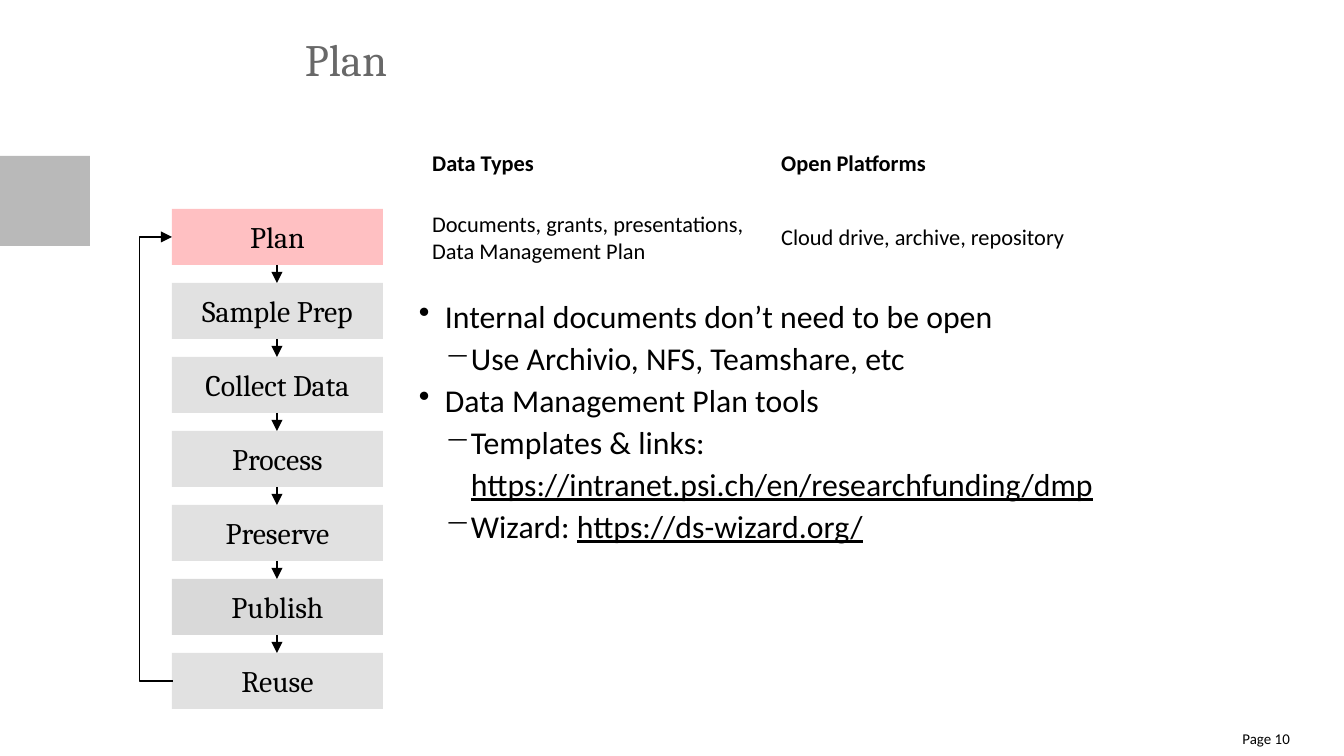
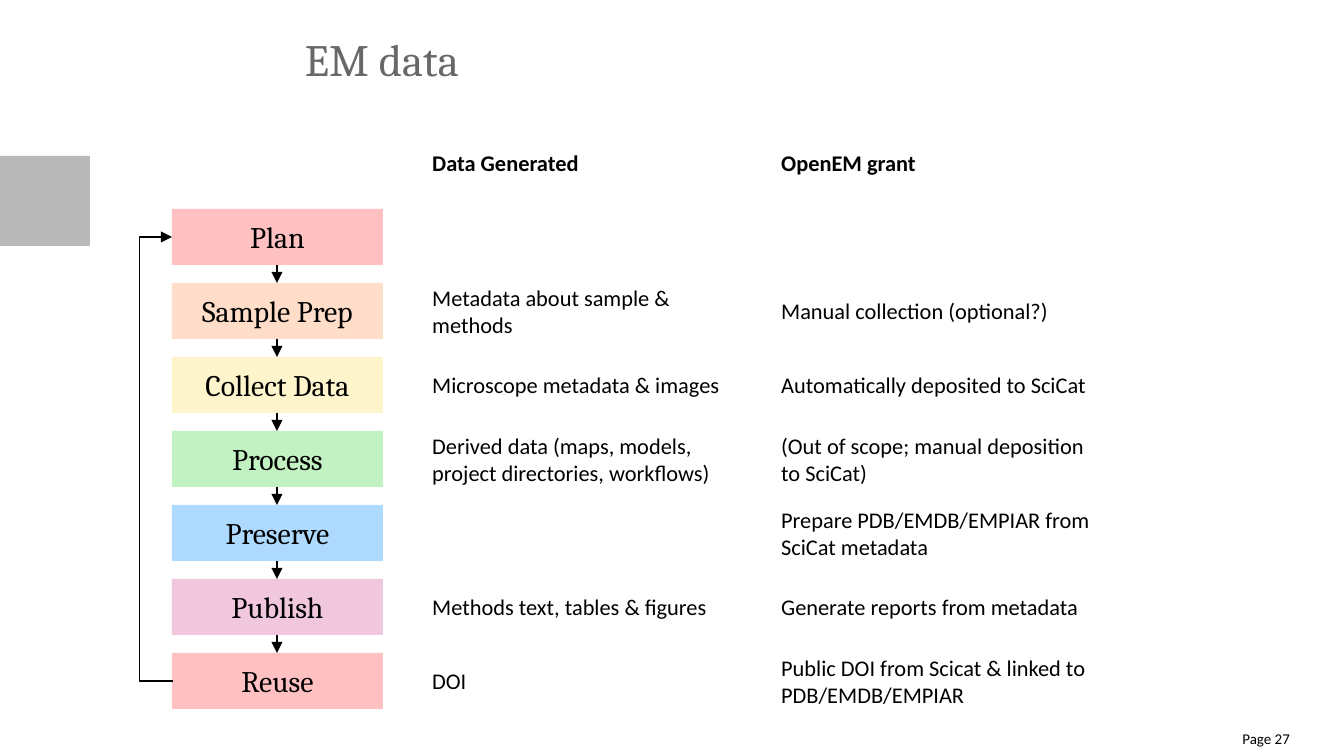
from lxml import etree
from pptx import Presentation
from pptx import util as u
from pptx.dml.color import RGBColor
from pptx.enum import shapes, text
from pptx.oxml.ns import qn

INK = {
    "black": "000000", "title": "686868", "band": "B9B9B9",
    "grey": "E1E1E1", "mid": "D9D9D9", "red": "FFC0C2",
    "peach": "FFDDC8", "cream": "FFF5CC", "green": "C2F2C2",
    "blue": "AFDAFF", "pink": "F0C7DC",
}
HEAD, BODY = "Cambria", "Calibri"
STEPS = ["Plan", "Sample Prep", "Collect Data", "Process",
         "Preserve", "Publish", "Reuse"]

# Rows of notes are keyed by step; bullets are (level, text, underlined address).
SLIDES = [
    {
        "title": "Plan", "page": 10,
        "fills": ["red", "grey", "grey", "grey", "grey", "mid", "grey"],
        "heads": ["Data Types", "Open Platforms"],
        "notes": {
            "Plan": ["Documents, grants, presentations, Data Management Plan",
                     "Cloud drive, archive, repository"],
        },
        "bullets": [
            (0, "Internal documents don’t need to be open", ""),
            (1, "Use Archivio, NFS, Teamshare, etc", ""),
            (0, "Data Management Plan tools", ""),
            (1, "Templates & links: ",
             "https://intranet.psi.ch/en/researchfunding/dmp"),
            (1, "Wizard: ", "https://ds-wizard.org/"),
        ],
    },
    {
        "title": "EM data", "page": 27,
        "fills": ["red", "peach", "cream", "green", "blue", "pink", "red"],
        "heads": ["Data Generated", "OpenEM grant"],
        "notes": {
            "Sample Prep": ["Metadata about sample & methods",
                            "Manual collection (optional?)"],
            "Collect Data": ["Microscope metadata & images",
                             "Automatically deposited to SciCat"],
            "Process": [
                "Derived data (maps, models, project directories, workflows)",
                "(Out of scope; manual deposition to SciCat)"],
            "Preserve": ["", "Prepare PDB/EMDB/EMPIAR from SciCat metadata"],
            "Publish": ["Methods text, tables & figures",
                        "Generate reports from metadata"],
            "Reuse": ["DOI",
                      "Public DOI from Scicat & linked to PDB/EMDB/EMPIAR"],
        },
        "bullets": [],
    },
]

WIDE, HIGH = 1344, 756
STEP_X, STEP_Y, STEP_W, STEP_H, PITCH = 172, 209, 211, 56, 74
NOTE_X, NOTE_W = 419, 349
LOOP_X = 140
INDENT = 26
TITLE = (305, 32, 987, 56)
BAND = (0, 156, 90, 90)
LIST = (NOTE_X, 293, 872, 371)
PAGE = (1206, 730, 84, 21)


def px(n):
    return round(n * u.Inches(10) / WIDE)


def place(box):
    return [px(n) for n in box]


def tint(name):
    return RGBColor.from_string(INK[name])


def style(par, size, face=BODY, ink="black", bold=False):
    for run in par.runs:
        font = run.font
        font.size, font.name, font.bold = u.Pt(size), face, bold
        font.color.rgb = tint(ink)


def trim(frame):
    frame.margin_left = frame.margin_right = 0
    frame.margin_top = frame.margin_bottom = 0
    frame.word_wrap = True


def block(slide, box, fill):
    rect = slide.shapes.add_shape(shapes.MSO_SHAPE.RECTANGLE, *place(box))
    rect.shadow.inherit = False
    rect.fill.solid()
    rect.fill.fore_color.rgb = tint(fill)
    rect.line.fill.background()
    return rect


def arrow(slide, kind, ends):
    line = slide.shapes.add_connector(kind, *place(ends))
    line.line.color.rgb = tint("black")
    line.line.width = u.Pt(0.75)
    props = line._element.spPr
    etree.SubElement(props.find(qn("a:ln")), qn("a:tailEnd"), type="triangle")
    etree.SubElement(props, qn("a:effectLst"))
    return line


def row_top(row):
    return STEP_Y + row * PITCH


def add_flow(slide, fills):
    for row, (name, fill) in enumerate(zip(STEPS, fills)):
        top = row_top(row)
        frame = block(slide, (STEP_X, top, STEP_W, STEP_H), fill).text_frame
        frame.text = name
        frame.vertical_anchor = text.MSO_ANCHOR.MIDDLE
        frame.paragraphs[0].alignment = text.PP_ALIGN.CENTER
        style(frame.paragraphs[0], 16, HEAD)
    mid = STEP_X + STEP_W // 2
    for row in range(len(STEPS) - 1):
        arrow(slide, shapes.MSO_CONNECTOR.STRAIGHT,
              (mid, row_top(row) + STEP_H, mid, row_top(row + 1)))
    add_loop(slide)


def add_loop(slide):
    """Lead the last step back to the first, round the left side."""
    half = STEP_H // 2
    start = STEP_X + 1
    loop = arrow(slide, shapes.MSO_CONNECTOR.ELBOW,
                 (start, row_top(len(STEPS) - 1) + half,
                  STEP_X, row_top(0) + half))
    geom = loop._element.spPr.find(qn("a:prstGeom"))
    bend = (start - LOOP_X) * 100000
    etree.SubElement(geom.find(qn("a:avLst")), qn("a:gd"),
                     name="adj1", fmla=f"val {bend}")


def add_notes(slide, row, cells, bold=False):
    for col, words in enumerate(cells):
        if not words:
            continue
        box = (NOTE_X + col * NOTE_W, row_top(row), NOTE_W, STEP_H)
        frame = slide.shapes.add_textbox(*place(box)).text_frame
        frame.word_wrap = True
        frame.vertical_anchor = text.MSO_ANCHOR.MIDDLE
        frame.text = words
        style(frame.paragraphs[0], 12, bold=bold)


def add_list(slide, items):
    frame = slide.shapes.add_textbox(*place(LIST)).text_frame
    trim(frame)
    for i, (level, words, link) in enumerate(items):
        par = frame.add_paragraph() if i else frame.paragraphs[0]
        par.level = level
        par.line_spacing = 1.1
        props = par._p.get_or_add_pPr()
        props.set("marL", str(px(INDENT * (level + 1))))
        props.set("indent", str(-px(INDENT)))
        color = etree.SubElement(props, qn("a:buClr"))
        etree.SubElement(color, qn("a:srgbClr"), val=INK["black"])
        etree.SubElement(props, qn("a:buChar"), char="•−"[level])
        par.add_run().text = words
        if link:
            run = par.add_run()
            run.text = link
            run.font.underline = True
        style(par, 17)


def add_frame(slide, title, page):
    """Add what every slide shares: band, title and page number."""
    block(slide, BAND, "band")
    head = slide.shapes.title
    head.left, head.top, head.width, head.height = place(TITLE)
    frame = head.text_frame
    trim(frame)
    frame.text = title
    frame.vertical_anchor = text.MSO_ANCHOR.TOP
    frame.paragraphs[0].alignment = text.PP_ALIGN.LEFT
    style(frame.paragraphs[0], 24, HEAD, "title")

    foot = slide.shapes.add_textbox(*place(PAGE)).text_frame
    trim(foot)
    foot.text = f"Page {page}"
    foot.paragraphs[0].alignment = text.PP_ALIGN.RIGHT
    style(foot.paragraphs[0], 8)


def main():
    deck = Presentation()
    deck.slide_width, deck.slide_height = px(WIDE), px(HIGH)
    for data in SLIDES:
        slide = deck.slides.add_slide(deck.slide_layouts[5])
        add_frame(slide, data["title"], data["page"])
        add_flow(slide, data["fills"])
        add_notes(slide, -1, data["heads"], bold=True)
        for name, cells in data["notes"].items():
            add_notes(slide, STEPS.index(name), cells)
        if data["bullets"]:
            add_list(slide, data["bullets"])
    deck.save("out.pptx")


if __name__ == "__main__":
    main()
